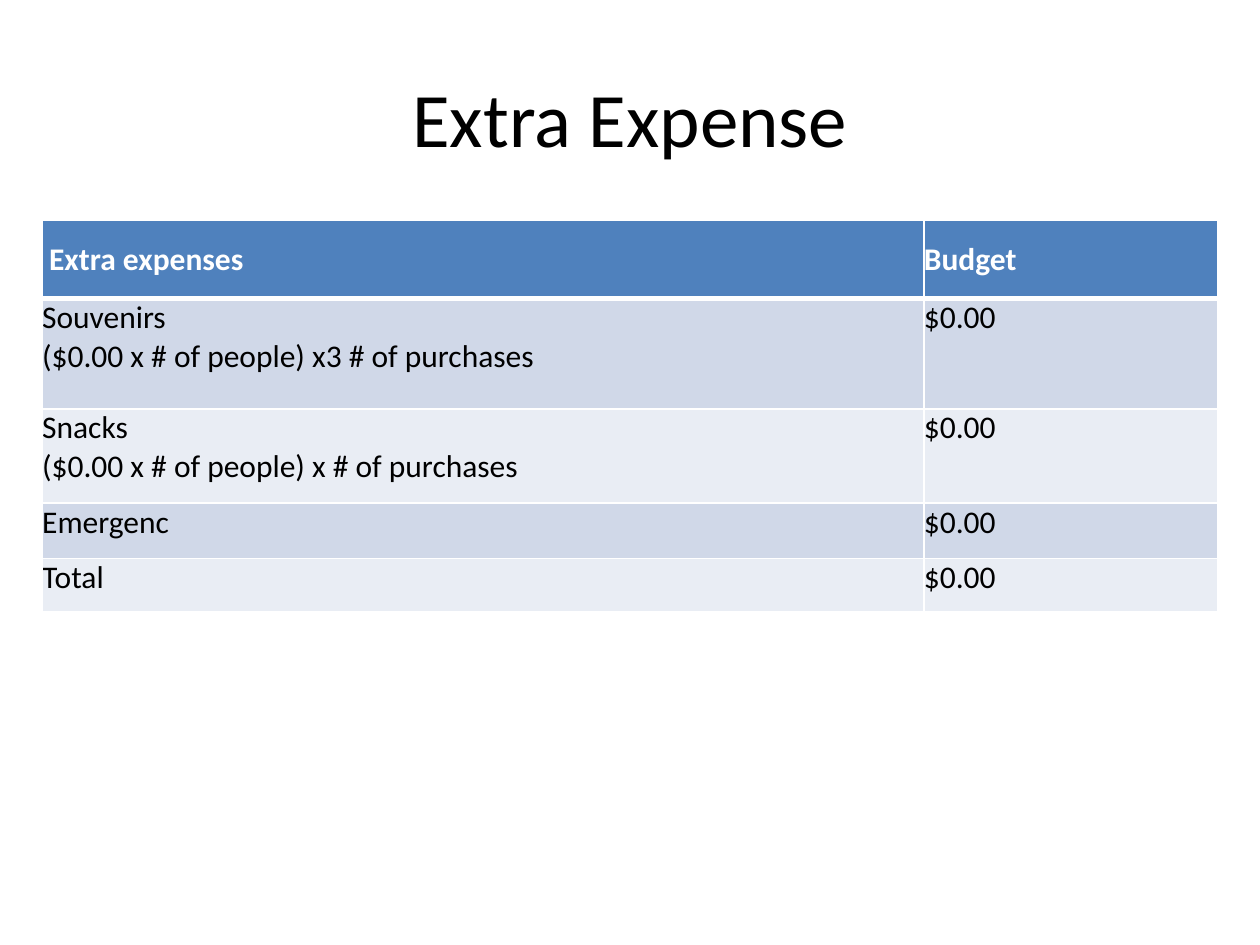
from lxml import etree
from pptx import Presentation
from pptx.dml.color import RGBColor
from pptx.enum.text import MSO_ANCHOR, PP_ALIGN
from pptx.oxml.ns import qn
from pptx.util import Cm, Pt

MIDDLE, TOP = MSO_ANCHOR.MIDDLE, MSO_ANCHOR.TOP
CENTER, LEFT = PP_ALIGN.CENTER, PP_ALIGN.LEFT

BLACK = RGBColor(0x00, 0x00, 0x00)
WHITE = RGBColor(0xFF, 0xFF, 0xFF)
HEADER_BLUE = RGBColor(0x4F, 0x81, 0xBD)
BANDS = (RGBColor(0xD0, 0xD8, 0xE8), RGBColor(0xE9, 0xED, 0xF4))

FONT = "Calibri"
TITLE_ONLY = 5
HEADER_INDENT = Cm(0.14)

EXPENSES = [
    (["Extra expenses"], ["Budget"]),
    (["Souvenirs", "($0.00 x # of people) x3 # of purchases"], ["$0.00"]),
    (["Snacks", "($0.00 x # of people) x # of purchases"], ["$0.00"]),
    (["Emergenc"], ["$0.00"]),
    (["Total"], ["$0.00"]),
]
COLUMN_SHARES = (0.75, 0.25)
ROW_HEIGHTS = (Cm(1.57), Cm(2.22), Cm(1.9), Cm(1.12), Cm(1.07))


def write_lines(tf, lines, size, color, align, bold=False):
    for i, line in enumerate(lines):
        p = tf.paragraphs[0] if i == 0 else tf.add_paragraph()
        p.alignment = align
        r = p.add_run()
        r.text = line
        r.font.name = FONT
        r.font.size = Pt(size)
        r.font.bold = bold
        r.font.color.rgb = color


def add_borders(cell, **widths):
    """Draw white borders; call before filling, as lines precede the fill."""
    tc_pr = cell._tc.get_or_add_tcPr()
    for side, width in widths.items():
        ln = etree.SubElement(tc_pr, qn(f"a:ln{side}"), w=str(Pt(width)))
        fill = etree.SubElement(ln, qn("a:solidFill"))
        etree.SubElement(fill, qn("a:srgbClr"), val=str(WHITE))


def set_title(slide, text, left, top, width, height):
    title = slide.shapes.title
    title.left, title.top, title.width, title.height = left, top, width, height
    title.text_frame.vertical_anchor = MIDDLE
    write_lines(title.text_frame, [text], 44, BLACK, CENTER)


def add_expense_table(slide, rows, left, top, width):
    frame = slide.shapes.add_table(
        len(rows), len(COLUMN_SHARES), left, top, width, sum(ROW_HEIGHTS))
    table = frame.table
    for column, share in zip(table.columns, COLUMN_SHARES):
        column.width = int(width * share)
    for i, (row, height) in enumerate(zip(rows, ROW_HEIGHTS)):
        table.rows[i].height = height
        header = i == 0
        for j, lines in enumerate(row):
            cell = table.cell(i, j)
            cell.margin_left = HEADER_INDENT if header and j == 0 else 0
            cell.margin_right = cell.margin_top = cell.margin_bottom = 0
            cell.vertical_anchor = MIDDLE if header else TOP
            add_borders(cell, L=1, R=1, T=3 if i == 1 else 1, B=3 if header else 1)
            cell.fill.solid()
            cell.fill.fore_color.rgb = HEADER_BLUE if header else BANDS[(i - 1) % 2]
            write_lines(cell.text_frame, lines, 18,
                        WHITE if header else BLACK, LEFT, bold=header)


def main():
    prs = Presentation()
    prs.slide_width, prs.slide_height = Cm(25.4), Cm(19.05)
    slide = prs.slides.add_slide(prs.slide_layouts[TITLE_ONLY])
    set_title(slide, "Extra Expense", Cm(1.27), Cm(0.76), Cm(22.86), Cm(3.18))
    add_expense_table(slide, EXPENSES, Cm(0.85), Cm(4.45), Cm(23.7))
    prs.save("out.pptx")


if __name__ == "__main__":
    main()
